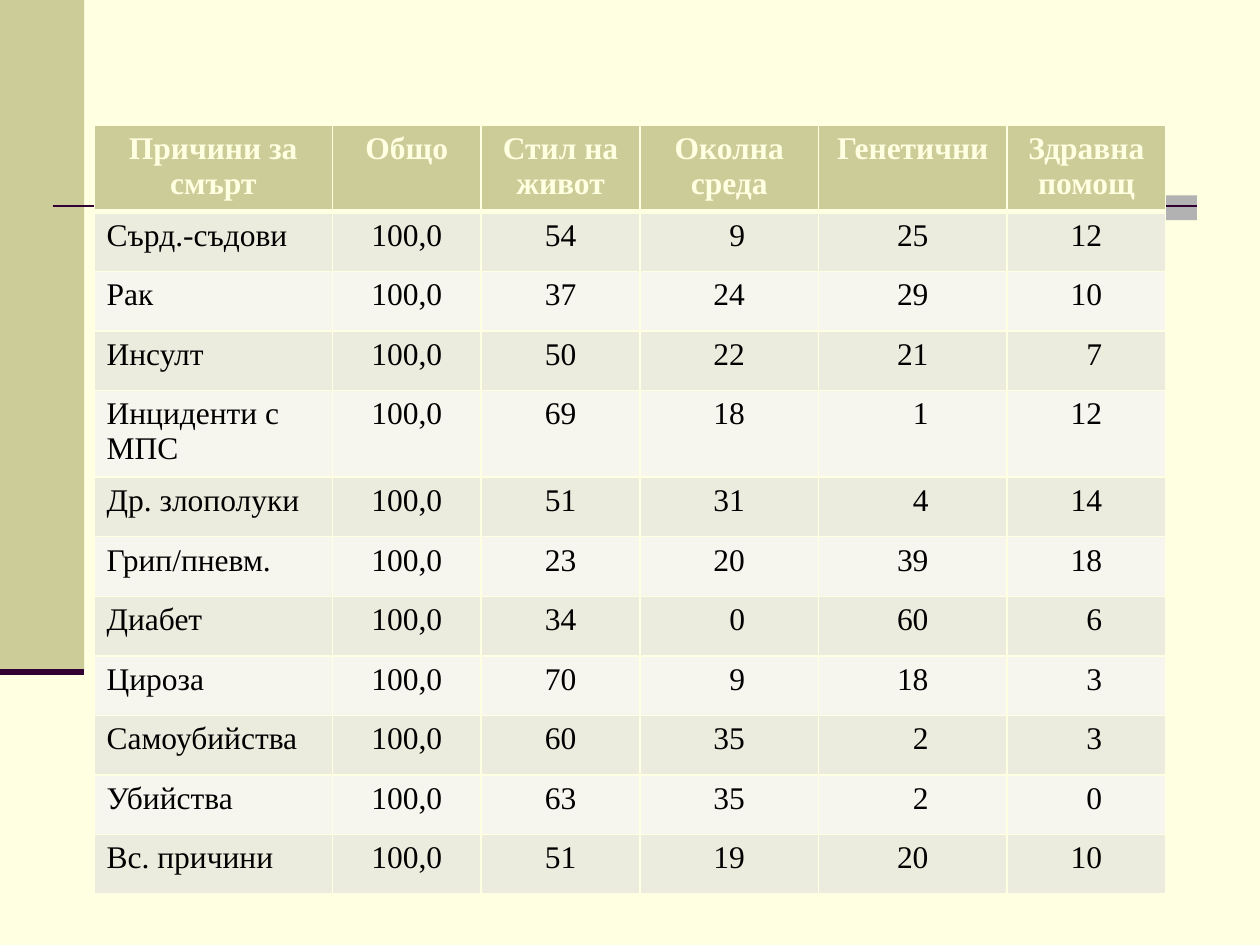
from lxml import etree
from pptx import Presentation
from pptx import util as u
from pptx.dml.color import RGBColor
from pptx.enum import shapes, text
from pptx.oxml.ns import qn

CREAM = RGBColor(0xFF, 0xFF, 0xE1)
KHAKI = RGBColor(0xCC, 0xCC, 0x99)
GREY = RGBColor(0xB2, 0xB2, 0xB2)
PLUM = RGBColor(0x33, 0x00, 0x33)
BLACK = RGBColor(0x00, 0x00, 0x00)
BANDS = (RGBColor(0xEC, 0xEC, 0xDE), RGBColor(0xF6, 0xF6, 0xEF))

HEADERS = ["Причини за смърт", "Общо", "Стил на живот",
           "Околна среда", "Генетични", "Здравна помощ"]
CAUSES = [
    ("Сърд.-съдови", "100,0", "54", "9", "25", "12"),
    ("Рак", "100,0", "37", "24", "29", "10"),
    ("Инсулт", "100,0", "50", "22", "21", "7"),
    ("Инциденти с МПС", "100,0", "69", "18", "1", "12"),
    ("Др. злополуки", "100,0", "51", "31", "4", "14"),
    ("Грип/пневм.", "100,0", "23", "20", "39", "18"),
    ("Диабет", "100,0", "34", "0", "60", "6"),
    ("Цироза", "100,0", "70", "9", "18", "3"),
    ("Самоубийства", "100,0", "60", "35", "2", "3"),
    ("Убийства", "100,0", "63", "35", "2", "0"),
    ("Вс. причини", "100,0", "51", "19", "20", "10"),
]

TABLE_LEFT, TABLE_TOP = 1.9, 2.52
COLUMN_WIDTHS = (4.8, 3, 3.2, 3.6, 3.8, 3.2)
ROW_HEIGHT, TALL_ROW_HEIGHT = 1.2, 1.75
TALL_ROWS = (0, 4)
FONT_SIZE = 18
CELL_MARGIN = 0.25
DIGIT_WIDTH = 0.32

# left, top, width, height, colour
PANELS = [(0, 0, 1.7, 13.54, KHAKI), (19.05, 3.94, 5.08, 0.5, GREY)]
# left, right, height on the page, line width in points
RULES = [(1.06, 24.13, 4.15, 1.5), (0, 1.7, 13.54, 3.5)]


def add_panel(page, left, top, width, height, color):
    panel = page.shapes.add_shape(shapes.MSO_SHAPE.RECTANGLE, u.Cm(left),
                                  u.Cm(top), u.Cm(width), u.Cm(height))
    panel.shadow.inherit = False
    panel.fill.solid()
    panel.fill.fore_color.rgb = color
    panel.line.fill.background()


def add_rule(page, left, right, y, weight):
    rule = page.shapes.add_connector(shapes.MSO_CONNECTOR.STRAIGHT, u.Cm(left),
                                     u.Cm(y), u.Cm(right), u.Cm(y))
    rule.line.color.rgb = PLUM
    rule.line.width = u.Pt(weight)
    etree.SubElement(rule.line._get_or_add_ln().getparent(), qn("a:effectLst"))


def set_borders(cell, color, **weights):
    """Draw the named sides (L, R, T, B), weights in points, below the fill in order."""
    properties = cell._tc.get_or_add_tcPr()
    for index, (side, weight) in enumerate(weights.items()):
        border = etree.Element(qn(f"a:ln{side}"), w=str(u.Pt(weight)))
        solid = etree.SubElement(border, qn("a:solidFill"))
        etree.SubElement(solid, qn("a:srgbClr"), val=str(color))
        properties.insert(index, border)


def write(cell, content, *, color=BLACK, bold=False, align=text.PP_ALIGN.CENTER):
    para = cell.text_frame.paragraphs[0]
    para.alignment = align
    span = para.add_run()
    span.text = content
    span.font.name = "Times New Roman"
    span.font.size = u.Pt(FONT_SIZE)
    span.font.bold = bold
    span.font.color.rgb = color


def add_causes_table(page):
    rows = [HEADERS, *CAUSES]
    heights = [TALL_ROW_HEIGHT if r in TALL_ROWS else ROW_HEIGHT
               for r in range(len(rows))]
    table = page.shapes.add_table(
        len(rows), len(HEADERS), u.Cm(TABLE_LEFT), u.Cm(TABLE_TOP),
        u.Cm(sum(COLUMN_WIDTHS)), u.Cm(sum(heights))).table
    for column, width in zip(table.columns, COLUMN_WIDTHS):
        column.width = u.Cm(width)
    for r, (row, height) in enumerate(zip(rows, heights)):
        table.rows[r].height = u.Cm(height)
        for c, content in enumerate(row):
            cell = table.cell(r, c)
            # A lone digit lines up under the units of two-digit numbers.
            indent = DIGIT_WIDTH if len(content) == 1 else 0
            cell.margin_left = u.Cm(CELL_MARGIN + indent)
            cell.margin_right = u.Cm(CELL_MARGIN)
            cell.fill.solid()
            cell.fill.fore_color.rgb = BANDS[(r - 1) % 2] if r else KHAKI
            set_borders(cell, CREAM, L=1, R=1, T=3 if r == 1 else 1,
                        B=1 if r else 3)
            if r == 0:
                write(cell, content, color=CREAM, bold=True)
            elif c == 0:
                write(cell, content, align=text.PP_ALIGN.LEFT)
            else:
                write(cell, content)


def main():
    deck = Presentation()
    deck.slide_width, deck.slide_height = u.Cm(25.4), u.Cm(19.05)
    page = deck.slides.add_slide(deck.slide_layouts[6])
    page.background.fill.solid()
    page.background.fill.fore_color.rgb = CREAM
    for panel in PANELS:
        add_panel(page, *panel)
    for rule in RULES:
        add_rule(page, *rule)
    add_causes_table(page)
    deck.save("out.pptx")


if __name__ == "__main__":
    main()
